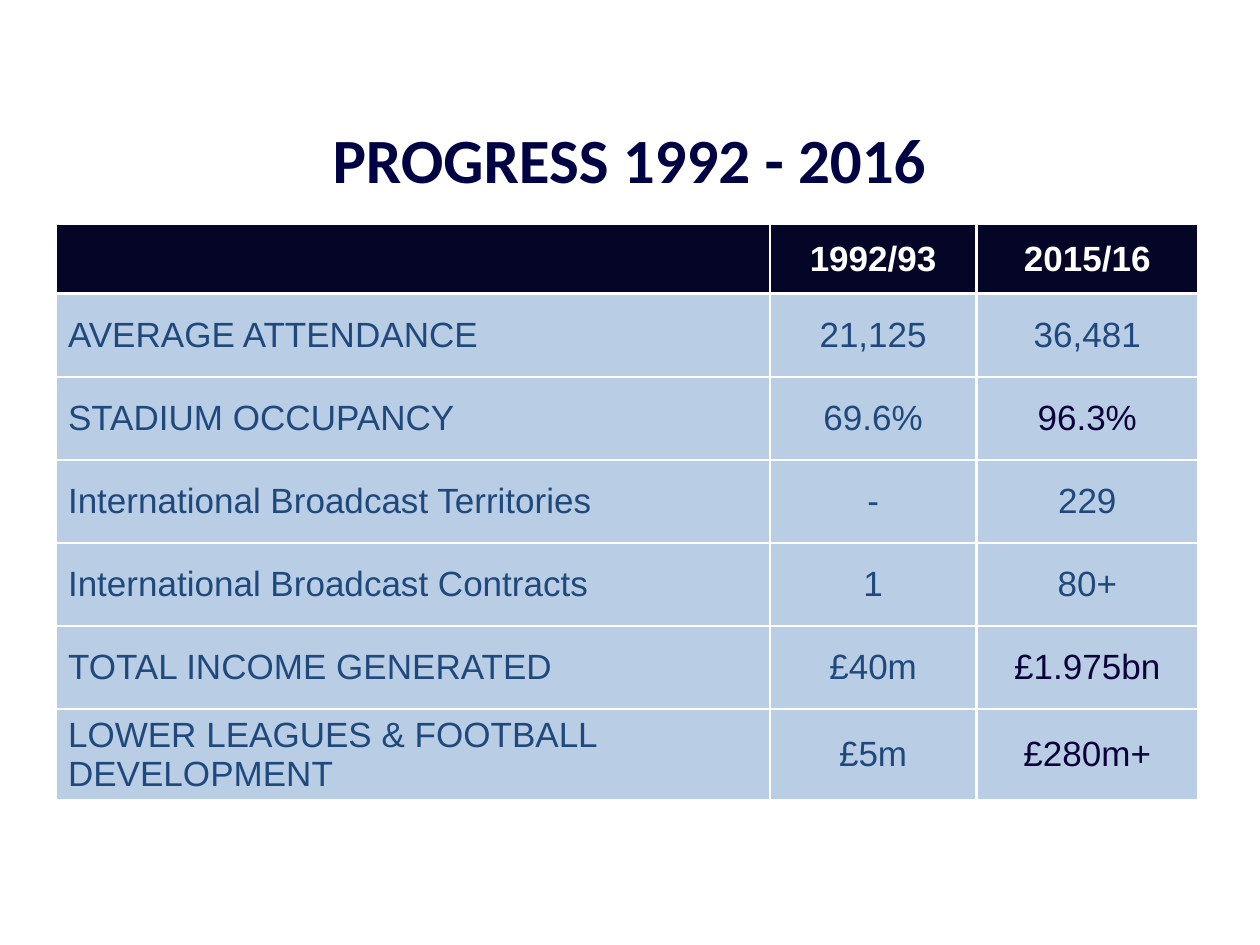
from pptx import Presentation
from pptx.dml.color import RGBColor
from pptx.enum.text import MSO_ANCHOR, PP_ALIGN
from pptx.oxml import parse_xml
from pptx.oxml.ns import nsdecls
from pptx.util import Inches, Pt

WHITE = RGBColor(0xFF, 0xFF, 0xFF)
TITLE_NAVY = RGBColor(0x00, 0x03, 0x43)
HEADER_NAVY = RGBColor(0x05, 0x05, 0x28)
ROW_BLUE = RGBColor(0xB9, 0xCD, 0xE5)
TEXT_BLUE = RGBColor(0x1F, 0x49, 0x7D)
HIGHLIGHT = RGBColor(0x0B, 0x02, 0x3B)

COLUMN_WIDTHS = [5.67, 1.64, 1.76]
HEADER_HEIGHT, ROW_HEIGHT = 0.55, 0.66
ROWS = [
    ("", "1992/93", "2015/16"),
    ("AVERAGE ATTENDANCE", "21,125", "36,481"),
    ("STADIUM OCCUPANCY", "69.6%", "96.3%"),
    ("International Broadcast Territories", "-", "229"),
    ("International Broadcast Contracts", "1", "80+"),
    ("TOTAL INCOME GENERATED", "£40m", "£1.975bn"),
    ("LOWER LEAGUES & FOOTBALL DEVELOPMENT", "£5m", "£280m+"),
]
HIGHLIGHTED_VALUES = {"96.3%", "£1.975bn", "£280m+"}


def write_text(text_frame, text, alignment, color, **font_values):
    paragraph = text_frame.paragraphs[0]
    paragraph.text = text
    paragraph.alignment = alignment
    paragraph.font.color.rgb = color
    for name, value in font_values.items():
        setattr(paragraph.font, name, value)


def add_borders(cell, color, width):
    properties = cell._tc.get_or_add_tcPr()
    for position, side in enumerate(("lnL", "lnR", "lnT", "lnB")):
        border = parse_xml(
            f'<a:{side} {nsdecls("a")} w="{width}"><a:solidFill>'
            f'<a:srgbClr val="{color}"/></a:solidFill></a:{side}>'
        )
        properties.insert(position, border)


presentation = Presentation()
presentation.slide_width = Inches(10)
presentation.slide_height = Inches(7.5)
slide = presentation.slides.add_slide(presentation.slide_layouts[6])

table_height = HEADER_HEIGHT + ROW_HEIGHT * (len(ROWS) - 1)
table = slide.shapes.add_table(
    len(ROWS), len(COLUMN_WIDTHS),
    Inches(0.44), Inches(1.78), Inches(sum(COLUMN_WIDTHS)), Inches(table_height),
).table
for column, width in zip(table.columns, COLUMN_WIDTHS):
    column.width = Inches(width)

for row_index, values in enumerate(ROWS):
    is_header = row_index == 0
    table.rows[row_index].height = Inches(HEADER_HEIGHT if is_header else ROW_HEIGHT)
    for column_index, value in enumerate(values):
        cell = table.cell(row_index, column_index)
        cell.fill.solid()
        cell.fill.fore_color.rgb = HEADER_NAVY if is_header else ROW_BLUE
        cell.vertical_anchor = MSO_ANCHOR.MIDDLE
        add_borders(cell, WHITE, Pt(1.5))
        if is_header:
            color = WHITE
        else:
            color = HIGHLIGHT if value in HIGHLIGHTED_VALUES else TEXT_BLUE
        alignment = PP_ALIGN.CENTER if column_index else PP_ALIGN.LEFT
        write_text(cell.text_frame, value, alignment, color,
                   name="Arial", size=Pt(20), bold=is_header)

title = slide.shapes.add_textbox(Inches(0.49), Inches(0.91), Inches(9.01), Inches(0.87))
title.text_frame.word_wrap = True
write_text(title.text_frame, "PROGRESS 1992 - 2016", PP_ALIGN.CENTER, TITLE_NAVY,
           name="Calibri", size=Pt(36), bold=True)

presentation.save("out.pptx")
